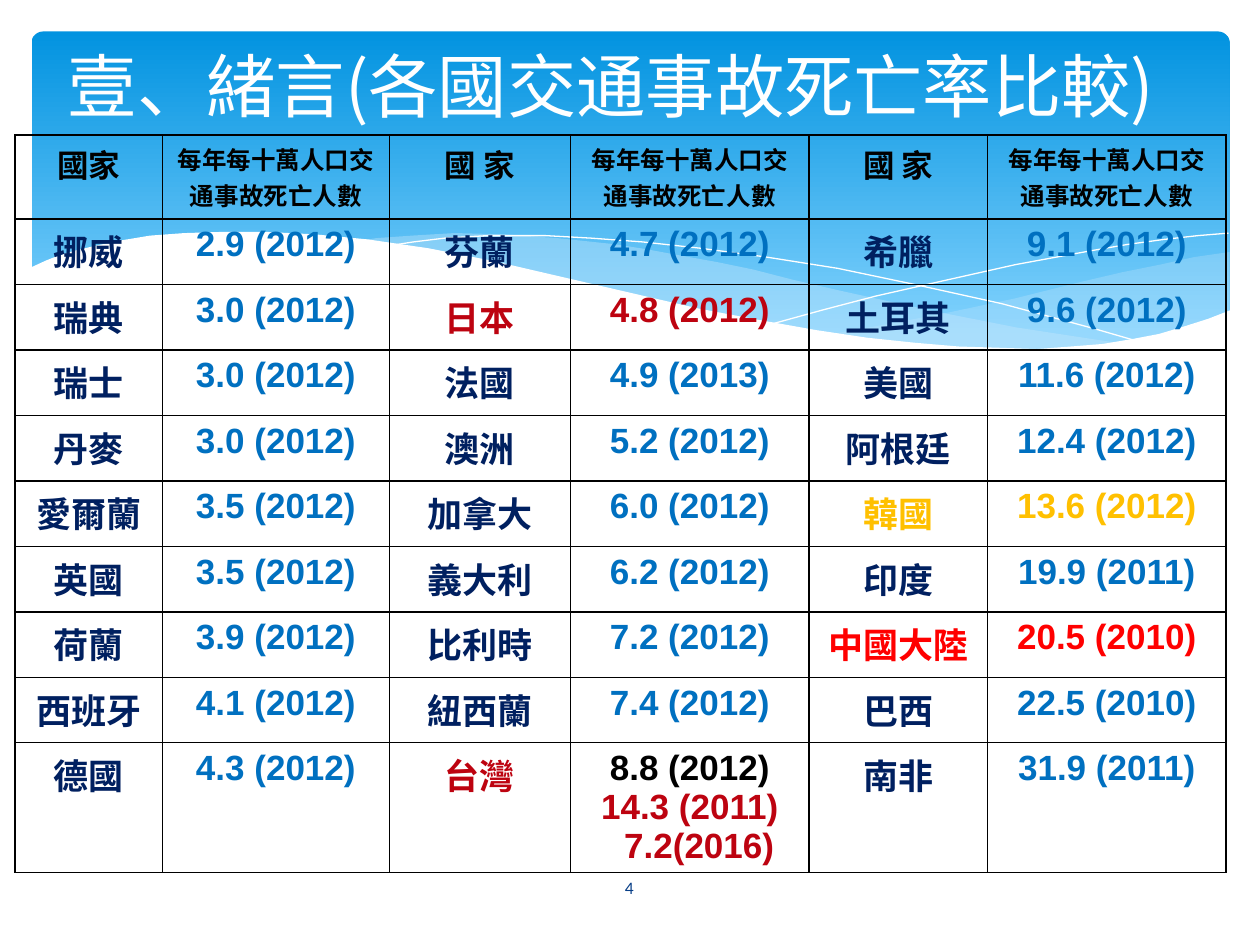
from dataclasses import dataclass

from lxml.etree import SubElement
from pptx import Presentation
from pptx.dml.color import RGBColor as RGB
from pptx.enum.shapes import MSO_SHAPE as SHAPE
from pptx.enum.text import MSO_ANCHOR as ANCHOR, MSO_AUTO_SIZE as AUTO, PP_ALIGN as ALIGN
from pptx.oxml.ns import qn
from pptx.util import Inches, Pt


@dataclass(frozen=True)
class Theme:
    cjk: str = "Noto Sans CJK SC"
    latin: str = "Arial"
    footer: str = "Calibri"
    white: str = "FFFFFF"
    black: str = "000000"
    navy: str = "002060"
    blue: str = "0070C0"
    crimson: str = "BD0310"
    amber: str = "FFC000"
    red: str = "FF0000"
    sky_top: str = "0293E0"
    sky_bottom: str = "83D3FE"
    mist: str = "C6E7FC"
    page: str = "073E87"
    title_size: float = 39.6
    body_size: float = 20
    country_head_size: float = 18
    rate_head_size: float = 14
    page_size: float = 10


T = Theme()
HUNDREDTH = Inches(0.01)

COUNTRY_HEADS = ["國家", "國 家", "國 家"]
RATE_HEAD = "每年每十萬人口交通事故死亡人數"
COLUMNS = [1.17, 1.8, 1.44, 1.89, 1.42, 1.89]
ROWS = [0.56] + [0.52] * 8 + [0.76]
HIGHLIGHTS = {"日本": T.crimson, "台灣": T.crimson, "韓國": T.amber, "中國大陸": T.red}
TAIWAN_COLOURS = [T.black, T.crimson, T.crimson]
LAST_RATE_INDENT = Inches(0.15)

# Three country groups, each a pair of table columns; "|" parts paragraphs
GROUPS = [
    [("挪威", "2.9 (2012)"), ("瑞典", "3.0 (2012)"), ("瑞士", "3.0 (2012)"),
     ("丹麥", "3.0 (2012)"), ("愛爾蘭", "3.5 (2012)"), ("英國", "3.5 (2012)"),
     ("荷蘭", "3.9 (2012)"), ("西班牙", "4.1 (2012)"), ("德國", "4.3 (2012)")],
    [("芬蘭", "4.7 (2012)"), ("日本", "4.8 (2012)"), ("法國", "4.9 (2013)"),
     ("澳洲", "5.2 (2012)"), ("加拿大", "6.0 (2012)"), ("義大利", "6.2 (2012)"),
     ("比利時", "7.2 (2012)"), ("紐西蘭", "7.4 (2012)"),
     ("台灣", "8.8 (2012)|14.3 (2011)|7.2(2016)")],
    [("希臘", "9.1 (2012)"), ("土耳其", "9.6 (2012)"), ("美國", "11.6 (2012)"),
     ("阿根廷", "12.4 (2012)"), ("韓國", "13.6 (2012)"), ("印度", "19.9 (2011)"),
     ("中國大陸", "20.5 (2010)"), ("巴西", "22.5 (2010)"), ("南非", "31.9 (2011)")],
]

# Wave outlines, in hundredths of an inch
RIGHT_MIST = [
    (976, 200), (948, 204), (921, 210), (891, 216), (861, 223), (805, 237), (753, 248),
    (706, 257), (661, 265), (691, 269), (719, 272), (745, 275), (781, 277), (814, 278),
    (844, 277), (872, 274), (897, 270), (921, 265), (942, 259), (963, 252), (976, 247)]
MIDDLE_MIST = [
    (893, 273), (866, 269), (807, 260), (741, 247), (668, 231), (629, 222), (598, 214),
    (569, 208), (541, 203), (514, 198), (489, 194), (442, 189), (399, 186), (361, 185),
    (328, 187), (299, 189), (286, 191), (323, 196), (362, 203), (404, 211), (449, 222),
    (491, 232), (530, 240), (566, 248), (601, 255), (634, 261), (665, 266), (695, 270),
    (722, 274), (748, 276), (785, 278), (828, 278), (857, 277), (876, 275)]
FALLING_LINE = [
    (309, 195), (328, 192), (353, 189), (387, 187), (433, 187), (469, 189), (510, 192),
    (556, 197), (608, 204), (665, 213), (727, 226), (795, 241), (869, 261), (907, 272)]
RISING_LINE = [
    (613, 257), (653, 246), (695, 235), (748, 223), (806, 210), (866, 199), (895, 194),
    (924, 190), (951, 187), (975, 185)]
WHITE_WAVE = [
    (977, 246), (959, 253), (940, 259), (920, 265), (899, 269), (875, 273), (850, 275),
    (823, 277), (793, 276), (761, 275), (726, 272), (688, 268), (648, 262), (603, 254),
    (555, 245), (503, 233), (447, 220), (391, 207), (340, 197), (292, 190), (250, 186),
    (211, 184), (177, 184), (146, 185), (119, 187), (95, 191), (76, 195), (59, 199),
    (46, 203), (36, 207), (23, 213), (23, 329), (977, 329)]


def add_text(paragraph, text, face, size, colour, bold=False):
    paragraph.alignment = ALIGN.CENTER
    run = paragraph.add_run()
    run.text = text
    font = run.font
    font.name, font.size, font.bold = face, Pt(size), bold
    font.color.rgb = RGB.from_string(colour)
    SubElement(font._element, qn("a:ea")).set("typeface", face)


def add_wave(slide, points, colour=None, opacity=None):
    """A filled wave, or a white hairline when no colour is given."""
    builder = slide.shapes.build_freeform(*points[0], scale=HUNDREDTH)
    builder.add_line_segments(points[1:], close=colour is not None)
    wave = builder.convert_to_shape()
    wave.shadow.inherit = False
    if colour is None:
        wave.fill.background()
        wave.line.color.rgb = RGB.from_string(T.white)
        wave.line.width = Pt(0)
        return
    wave.fill.solid()
    wave.fill.fore_color.rgb = RGB.from_string(colour)
    wave.line.fill.background()
    if opacity:
        tint = wave._element.spPr.find(".//" + qn("a:srgbClr"))
        SubElement(tint, qn("a:alpha")).set("val", str(opacity * 1000))


def add_banner(slide):
    banner = slide.shapes.add_shape(
        SHAPE.ROUNDED_RECTANGLE, Inches(0.25), Inches(0.25), Inches(9.51), Inches(2.7))
    banner.adjustments[0] = 0.034
    banner.shadow.inherit = False
    banner.line.fill.background()
    banner.fill.gradient()
    banner.fill.gradient_angle = 270
    stops = zip(banner.fill.gradient_stops, [T.sky_top, T.sky_bottom], [0, 0.9])
    for stop, colour, position in stops:
        stop.color.rgb = RGB.from_string(colour)
        stop.position = position


def draw_borders(cell):
    properties = cell._tc.get_or_add_tcPr()
    for place, side in enumerate(["a:lnL", "a:lnR", "a:lnT", "a:lnB"]):
        border = properties.makeelement(qn(side), {"w": str(Pt(1))})
        fill = SubElement(border, qn("a:solidFill"))
        SubElement(fill, qn("a:srgbClr")).set("val", T.black)
        properties.insert(place, border)


def fill_rate(cell, rate, colours):
    lines = rate.split("|")
    for place, (line, colour) in enumerate(zip(lines, colours)):
        paragraph = cell.text_frame.paragraphs[0] if place == 0 else cell.text_frame.add_paragraph()
        add_text(paragraph, line, T.latin, T.body_size, colour, bold=True)
    if len(lines) > 1:
        paragraph._p.get_or_add_pPr().set("marL", str(LAST_RATE_INDENT))


def add_rates(slide):
    rates = slide.shapes.add_table(
        len(ROWS), len(COLUMNS), Inches(0.12), Inches(1.07),
        Inches(sum(COLUMNS)), Inches(sum(ROWS))).table
    for column, width in zip(rates.columns, COLUMNS):
        column.width = Inches(width)
    for row, height in zip(rates.rows, ROWS):
        row.height = Inches(height)
    for cell in rates.iter_cells():
        cell.fill.background()
        draw_borders(cell)

    for group, (head, countries) in enumerate(zip(COUNTRY_HEADS, GROUPS)):
        left = 2 * group
        heads = [(head, T.country_head_size), (RATE_HEAD, T.rate_head_size)]
        for offset, (label, size) in enumerate(heads):
            paragraph = rates.cell(0, left + offset).text_frame.paragraphs[0]
            add_text(paragraph, label, T.cjk, size, T.black, bold=True)
        for row, (country, rate) in enumerate(countries, start=1):
            paragraph = rates.cell(row, left).text_frame.paragraphs[0]
            add_text(paragraph, country, T.cjk, T.body_size,
                     HIGHLIGHTS.get(country, T.navy), bold=True)
            colours = TAIWAN_COLOURS if country == "台灣" else [HIGHLIGHTS.get(country, T.blue)]
            fill_rate(rates.cell(row, left + 1), rate, colours)


def add_page_number(slide, number):
    page = slide.shapes.add_textbox(Inches(4.36), Inches(6.84), Inches(1.27), Inches(0.4))
    page.text_frame.word_wrap = True
    page.text_frame.vertical_anchor = ANCHOR.MIDDLE
    add_text(page.text_frame.paragraphs[0], number, T.footer, T.page_size, T.page)


def set_title(slide, text):
    title = slide.shapes.title
    title.left, title.top = Inches(0.2), Inches(0.21)
    title.width, title.height = Inches(9.3), Inches(0.93)
    title.text_frame.auto_size = AUTO.NONE
    title.text_frame.vertical_anchor = ANCHOR.MIDDLE
    add_text(title.text_frame.paragraphs[0], text, T.cjk, T.title_size, T.white)
    # Bring the title in front of the banner
    slide.shapes._spTree.append(title._element)


def main():
    deck = Presentation()
    deck.slide_width, deck.slide_height = Inches(10), Inches(7.5)
    slide = deck.slides.add_slide(deck.slide_layouts[5])

    # Banner with its waves
    add_banner(slide)
    add_wave(slide, RIGHT_MIST, T.mist, opacity=29)
    add_wave(slide, MIDDLE_MIST, T.mist, opacity=40)
    add_wave(slide, FALLING_LINE)
    add_wave(slide, RISING_LINE)
    add_wave(slide, WHITE_WAVE, T.white)

    # Content
    add_rates(slide)
    add_page_number(slide, "4")
    set_title(slide, "壹、緒言(各國交通事故死亡率比較)")
    deck.save("out.pptx")


if __name__ == "__main__":
    main()
